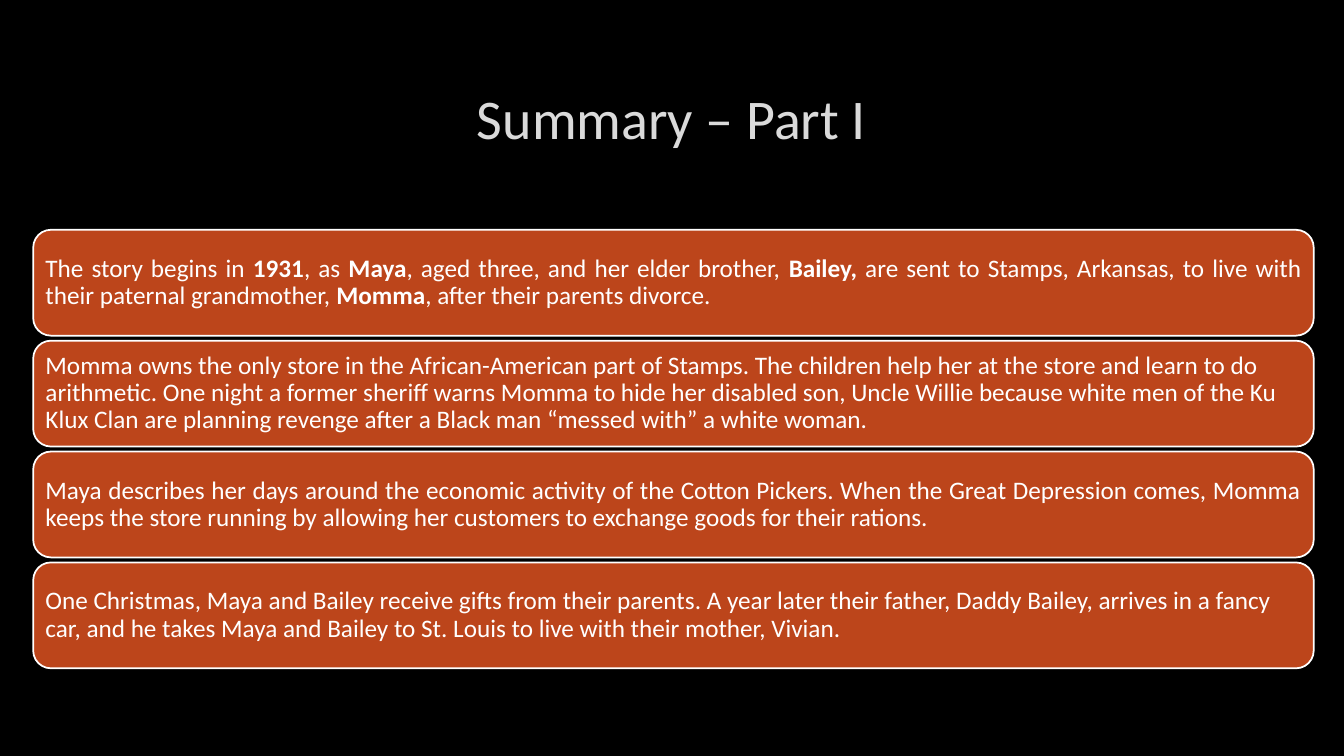
from pptx import Presentation
from pptx.dml.color import RGBColor
from pptx.enum.shapes import MSO_SHAPE
from pptx.enum.text import MSO_ANCHOR, PP_ALIGN
from pptx.util import Inches, Pt

ROUNDED = MSO_SHAPE.ROUNDED_RECTANGLE
MIDDLE = MSO_ANCHOR.MIDDLE
LEFT, CENTER, JUSTIFY = PP_ALIGN.LEFT, PP_ALIGN.CENTER, PP_ALIGN.JUSTIFY

BLACK = RGBColor(0x00, 0x00, 0x00)
WHITE = RGBColor(0xFF, 0xFF, 0xFF)
SILVER = RGBColor(0xDA, 0xDA, 0xDA)
RUST = RGBColor(0xBC, 0x45, 0x1B)

CARD_TOP, CARD_HEIGHT, CARD_GAP = 2.28, 1.05, 0.05

# Each card: alignment and text pieces, where every second piece is bold.
CARDS = [
    (JUSTIFY, ["The story begins in ", "1931", ", as ", "Maya",
               ", aged three, and her elder brother, ", "Bailey, ",
               "are sent to Stamps, Arkansas, to live with their paternal "
               "grandmother, ", "Momma", ", after their parents divorce."]),
    (LEFT, ["Momma owns the only store in the African-American part of Stamps. "
            "The children help her at the store and learn to do arithmetic. "
            "One night a former sheriff warns Momma to hide her disabled son, "
            "Uncle Willie because white men of the Ku Klux Clan are planning "
            "revenge after a Black man “messed with” a white woman."]),
    (JUSTIFY, ["Maya describes her days around the economic activity of the "
               "Cotton Pickers. When the Great Depression comes, Momma keeps "
               "the store running by allowing her customers to exchange goods "
               "for their rations."]),
    (LEFT, ["One Christmas, Maya and Bailey receive gifts from their parents. "
            "A year later their father, Daddy Bailey, arrives in a fancy car, "
            "and he takes Maya and Bailey to St. Louis to live with their "
            "mother, Vivian."]),
]


class SummarySlide:
    font = "Calibri"

    def __init__(self, prs):
        self.s = prs.slides.add_slide(prs.slide_layouts[6])
        fill = self.s.background.fill
        fill.solid()
        fill.fore_color.rgb = BLACK

    def set_text(self, tf, pieces, size, color, align):
        """Fill a text frame with one paragraph, every second piece bold."""
        tf.word_wrap = True
        tf.vertical_anchor = MIDDLE
        p = tf.paragraphs[0]
        p.alignment = align
        p.line_spacing = 0.9
        p.font.name = self.font
        p.font.size = Pt(size)
        p.font.color.rgb = color
        for i, piece in enumerate(pieces):
            r = p.add_run()
            r.text = piece
            if i % 2:
                r.font.bold = True

    def title(self, text):
        box = self.s.shapes.add_textbox(
            Inches(1), Inches(0.67), Inches(11.32), Inches(1.06))
        self.set_text(box.text_frame, [text], 40, SILVER, CENTER)

    def card(self, top, align, pieces):
        sp = self.s.shapes.add_shape(
            ROUNDED, Inches(0.33), Inches(top), Inches(12.7), Inches(CARD_HEIGHT))
        sp.shadow.inherit = False
        sp.fill.solid()
        sp.fill.fore_color.rgb = RUST
        sp.line.color.rgb = WHITE
        sp.line.width = Pt(1.25)
        tf = sp.text_frame
        tf.margin_left = tf.margin_right = Inches(0.07)
        tf.margin_top = tf.margin_bottom = Inches(0.07)
        self.set_text(tf, pieces, 18, WHITE, align)


def main():
    prs = Presentation()
    prs.slide_width, prs.slide_height = Inches(13.33), Inches(7.5)
    slide = SummarySlide(prs)
    slide.title("Summary – Part I")
    for i, (align, pieces) in enumerate(CARDS):
        slide.card(CARD_TOP + i * (CARD_HEIGHT + CARD_GAP), align, pieces)
    prs.save("out.pptx")


if __name__ == "__main__":
    main()
